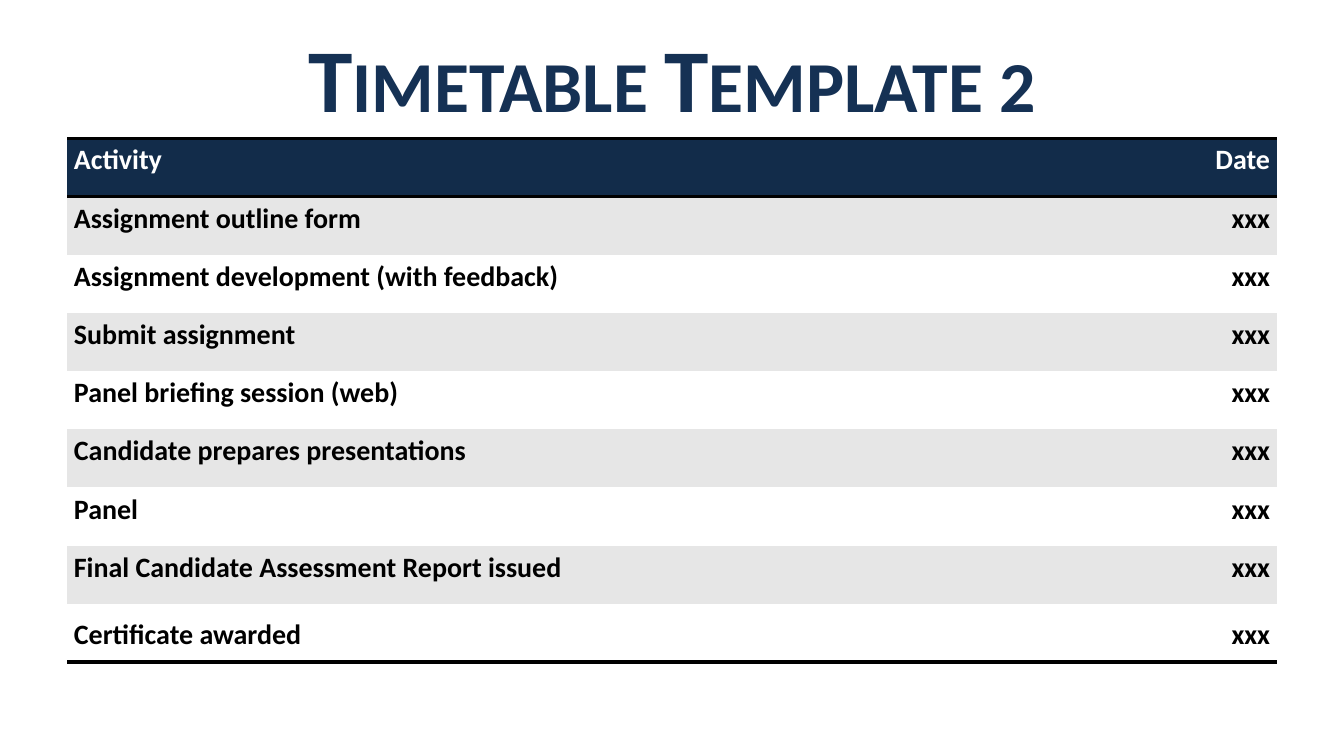
"""Build a timetable slide with a title and a two-column table of activities and dates."""
from dataclasses import dataclass

from lxml import etree
from pptx import Presentation
from pptx import util as u
from pptx.dml.color import RGBColor
from pptx.enum import text
from pptx.oxml import ns

TITLE_BLUE = RGBColor(0x15, 0x31, 0x54)
HEADER_BLUE = RGBColor(0x12, 0x2C, 0x4A)
BAND_GREY = RGBColor(0xE6, 0xE6, 0xE6)
WHITE = RGBColor(0xFF, 0xFF, 0xFF)
BLACK = RGBColor(0x00, 0x00, 0x00)
FONT_NAME = "Calibri"
PLAIN_TABLE_STYLE = "{2D5ABB26-0587-4C30-8999-92F81FD0307C}"
COLUMN_WIDTHS = (427, 221)
ROW_HEIGHT = 31.2
ALIGNMENTS = (text.PP_ALIGN.LEFT, text.PP_ALIGN.RIGHT)
ACTIVITIES = (
    "Assignment outline form",
    "Assignment development (with feedback)",
    "Submit assignment",
    "Panel briefing session (web)",
    "Candidate prepares presentations",
    "Panel",
    "Final Candidate Assessment Report issued",
    "Certificate awarded",
)


@dataclass(frozen=True)
class TimetableRow:
    activity: str
    date: str
    fill: RGBColor
    color: RGBColor = BLACK
    borders: tuple[str, ...] = ()
    anchor: text.MSO_ANCHOR = text.MSO_ANCHOR.TOP


def apply_format(target, values: dict) -> None:
    for name, value in values.items():
        setattr(target, name, value)


def write_text(para, words: str, size: float, color: RGBColor):
    span = para.add_run()
    span.text = words
    apply_format(span.font, {"name": FONT_NAME, "size": u.Pt(size), "bold": True})
    span.font.color.rgb = color
    return span


def add_title(page, words: str) -> None:
    box = page.shapes.add_textbox(u.Pt(36.5), u.Pt(7.2), u.Pt(647), u.Pt(67.7))
    frame = box.text_frame
    apply_format(frame, {"word_wrap": True, "vertical_anchor": text.MSO_ANCHOR.MIDDLE})
    para = frame.paragraphs[0]
    para.alignment = text.PP_ALIGN.CENTER
    span = write_text(para, words, 48, TITLE_BLUE)
    span.font._element.set("cap", "small")


def add_borders(cell, edges: tuple[str, ...]) -> None:
    properties = cell._tc.get_or_add_tcPr()
    for position, edge in enumerate(edges):
        line = etree.Element(ns.qn(f"a:{edge}"), w=str(u.Pt(2)))
        fill = etree.SubElement(line, ns.qn("a:solidFill"))
        etree.SubElement(fill, ns.qn("a:srgbClr"), val=str(BLACK))
        properties.insert(position, line)


def fill_row(cells, row: TimetableRow) -> None:
    for cell, words, alignment in zip(cells, (row.activity, row.date), ALIGNMENTS):
        apply_format(cell, {
            "margin_left": u.Pt(3.6),
            "margin_right": u.Pt(3.6),
            "margin_top": u.Pt(0),
            "margin_bottom": u.Pt(0),
            "vertical_anchor": row.anchor,
        })
        cell.fill.solid()
        cell.fill.fore_color.rgb = row.fill
        para = cell.text_frame.paragraphs[0]
        apply_format(para, {"alignment": alignment, "line_spacing": 1.15})
        write_text(para, words, 15, row.color)
        add_borders(cell, row.borders)


def timetable_rows() -> list[TimetableRow]:
    rows = [TimetableRow("Activity", "Date", HEADER_BLUE, WHITE, ("lnT", "lnB"))]
    rows += [
        TimetableRow(activity, "xxx", WHITE if index % 2 else BAND_GREY)
        for index, activity in enumerate(ACTIVITIES[:-1])
    ]
    rows.append(TimetableRow(ACTIVITIES[-1], "xxx", WHITE, borders=("lnB",),
                             anchor=text.MSO_ANCHOR.MIDDLE))
    return rows


def add_timetable(page, rows: list[TimetableRow]) -> None:
    frame = page.shapes.add_table(
        len(rows), len(COLUMN_WIDTHS), u.Pt(36), u.Pt(74),
        u.Pt(sum(COLUMN_WIDTHS)), u.Pt(ROW_HEIGHT * len(rows)),
    )
    table = frame.table
    apply_format(table, {"first_row": False, "horz_banding": False})
    table._tbl.tblPr.find(ns.qn("a:tableStyleId")).text = PLAIN_TABLE_STYLE
    for column, width in zip(table.columns, COLUMN_WIDTHS):
        column.width = u.Pt(width)
    for table_row, row in zip(table.rows, rows):
        table_row.height = u.Pt(ROW_HEIGHT)
        fill_row(table_row.cells, row)


def main() -> None:
    deck = Presentation()
    apply_format(deck, {"slide_width": u.Pt(720), "slide_height": u.Pt(405)})
    page = deck.slides.add_slide(deck.slide_layouts[6])
    add_title(page, "Timetable Template 2")
    add_timetable(page, timetable_rows())
    deck.save("out.pptx")


if __name__ == "__main__":
    main()
